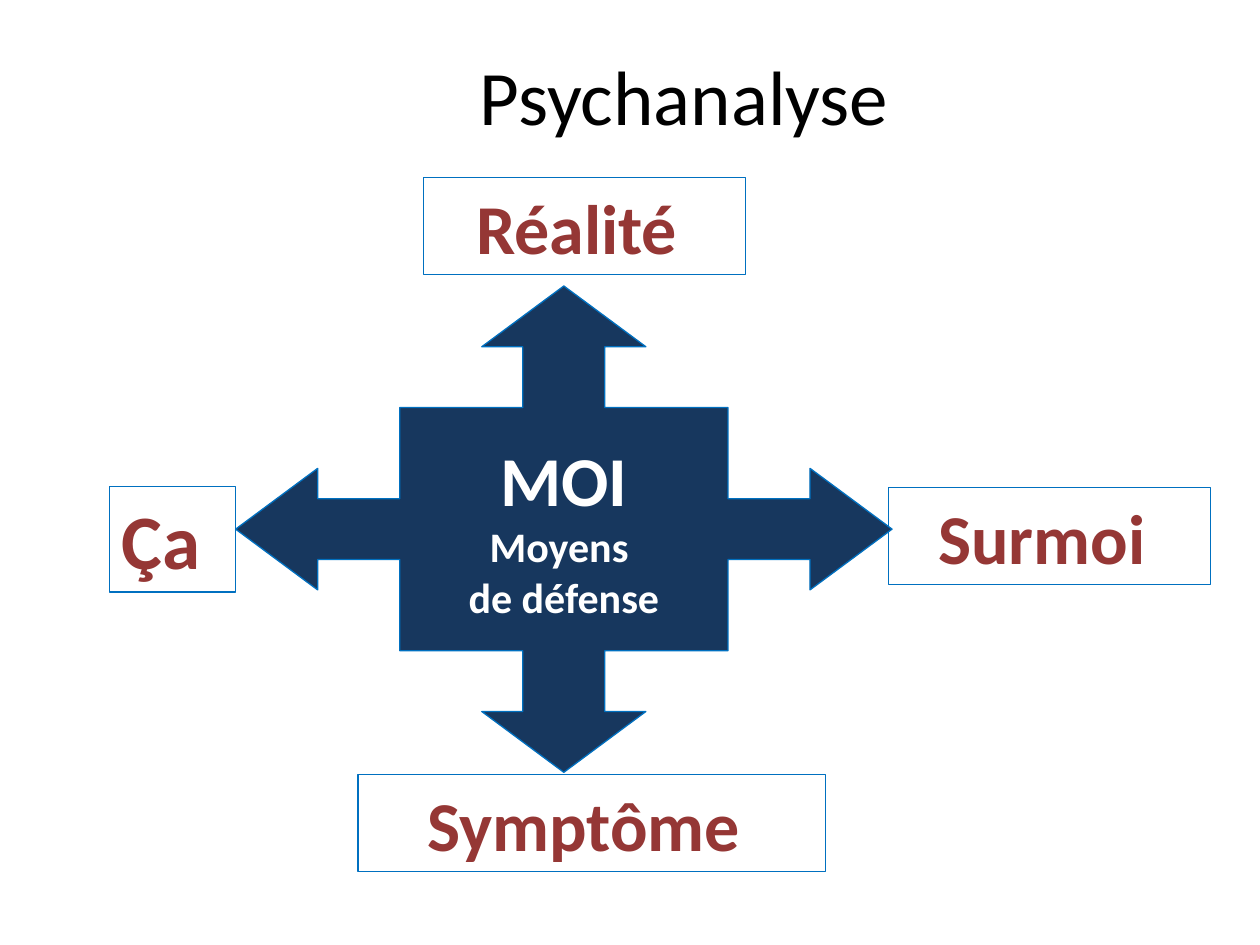
from dataclasses import dataclass

from pptx import Presentation
from pptx.dml.color import RGBColor
from pptx.enum.shapes import MSO_SHAPE
from pptx.enum.text import MSO_ANCHOR, MSO_AUTO_SIZE, PP_ALIGN
from pptx.util import Pt

PX = 9144
FONT = "Calibri"
RECT = MSO_SHAPE.RECTANGLE
TOP, MID = MSO_ANCHOR.TOP, MSO_ANCHOR.MIDDLE
LEFT, MIDDLE = PP_ALIGN.LEFT, PP_ALIGN.CENTER
GROW = MSO_AUTO_SIZE.SHAPE_TO_FIT_TEXT
GRID = 16
ARM = [(4, 4), (7, 4), (7, 2), (6, 2), (8, 0), (10, 2), (9, 2), (9, 4)]
COLORS = {
    "ink": "000000",
    "label": "953735",
    "edge": "0070C0",
    "core": "17375E",
    "light": "FFFFFF",
}


@dataclass(frozen=True)
class Area:
    x: int
    y: int
    w: int
    h: int

    def emu(self) -> list[int]:
        return [v * PX for v in (self.x, self.y, self.w, self.h)]


@dataclass(frozen=True)
class Label:
    text: str
    area: Area
    size: int = 40
    align: PP_ALIGN = MIDDLE
    anchor: MSO_ANCHOR = MID


CROSS = Area(187, 227, 521, 386)
TITLE = Area(100, 0, 900, 150)
LABELS = [
    Label("Surmoi ", Area(705, 387, 256, 77)),
    Label("Ça", Area(87, 386, 100, 84), 44, LEFT, TOP),
    Label("Réalité ", Area(336, 141, 256, 77)),
    Label("Symptôme ", Area(284, 615, 371, 77)),
]


def color(name: str) -> RGBColor:
    return RGBColor.from_string(COLORS[name])


def style(para, size: int, hue: str, bold: bool, align: PP_ALIGN) -> None:
    para.alignment = align
    for run in para.runs:
        font = run.font
        font.name, font.size, font.bold = FONT, Pt(size), bold
        font.color.rgb = color(hue)


def outline(shape) -> None:
    shape.shadow.inherit = False
    shape.line.color.rgb = color("edge")
    shape.line.width = Pt(0.75)


def draw_label(slide, label: Label) -> None:
    box = slide.shapes.add_shape(RECT, *label.area.emu())
    outline(box)
    box.fill.background()
    frame = box.text_frame
    frame.word_wrap = True
    frame.auto_size = GROW
    frame.vertical_anchor = label.anchor
    frame.text = label.text
    style(frame.paragraphs[0], label.size, "label", True, label.align)


def draw_cross(slide, area: Area) -> None:
    points, arm = [], ARM
    for _ in range(4):
        points += arm
        arm = [(GRID - y, x) for x, y in arm]
    scale = (area.w * PX / GRID, area.h * PX / GRID)
    path = slide.shapes.build_freeform(*points[0], scale=scale)
    path.add_line_segments(points[1:], close=True)
    cross = path.convert_to_shape(area.x * PX, area.y * PX)
    outline(cross)
    cross.fill.solid()
    cross.fill.fore_color.rgb = color("core")
    frame = cross.text_frame
    frame.word_wrap = False
    frame.vertical_anchor = MID
    frame.text = "MOI\nMoyens \nde défense"
    for para, size in zip(frame.paragraphs, (40, 24, 24)):
        style(para, size, "light", True, MIDDLE)


def draw_title(slide) -> None:
    title = slide.shapes.title
    title.left, title.top, title.width, title.height = TITLE.emu()
    frame = title.text_frame
    frame.vertical_anchor = MID
    frame.text = "Psychanalyse "
    style(frame.paragraphs[0], 44, "ink", False, MIDDLE)


def main() -> None:
    deck = Presentation()
    deck.slide_width, deck.slide_height = 1000 * PX, 750 * PX
    slide = deck.slides.add_slide(deck.slide_layouts[5])
    draw_title(slide)
    for label in LABELS[:2]:
        draw_label(slide, label)
    draw_cross(slide, CROSS)
    for label in LABELS[2:]:
        draw_label(slide, label)
    deck.save("out.pptx")


if __name__ == "__main__":
    main()
